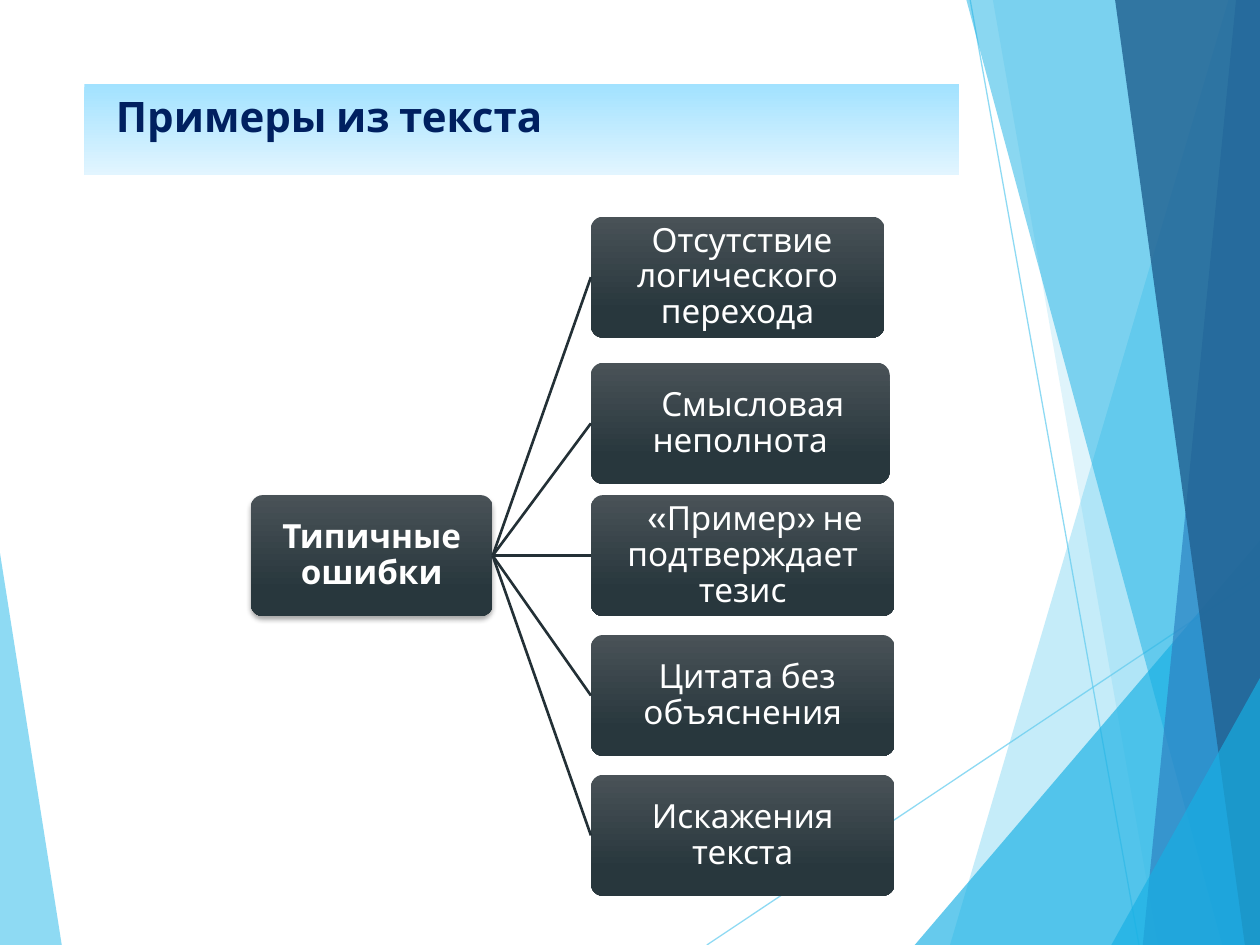
from dataclasses import dataclass

from lxml import etree
from pptx import Presentation
from pptx.dml.color import RGBColor
from pptx.enum.shapes import MSO_CONNECTOR, MSO_SHAPE
from pptx.enum.text import MSO_ANCHOR, MSO_AUTO_SIZE, PP_ALIGN
from pptx.oxml.ns import qn
from pptx.util import Inches, Pt

STRAIGHT = MSO_CONNECTOR.STRAIGHT
ROUND_RECT = MSO_SHAPE.ROUNDED_RECTANGLE
TOP, MIDDLE = MSO_ANCHOR.TOP, MSO_ANCHOR.MIDDLE
LEFT, CENTER = PP_ALIGN.LEFT, PP_ALIGN.CENTER
NO_AUTOFIT = MSO_AUTO_SIZE.NONE

SKY = RGBColor(0x5F, 0xCB, 0xEF)
CYAN = RGBColor(0x17, 0xB0, 0xE4)
BLUE = RGBColor(0x2E, 0x83, 0xC3)
DEEP_BLUE = RGBColor(0x22, 0x62, 0x92)
NAVY = RGBColor(0x00, 0x20, 0x60)
WHITE = RGBColor(0xFF, 0xFF, 0xFF)
LINK = RGBColor(0x23, 0x30, 0x36)
NODE_TOP = RGBColor(0x49, 0x52, 0x57)
NODE_BOTTOM = RGBColor(0x28, 0x37, 0x3D)
TITLE_TOP = RGBColor(0xA2, 0xE2, 0xFF)
TITLE_BOTTOM = RGBColor(0xE2, 0xF5, 0xFF)

FONT = "Cabin"
NODE_HEIGHT = 0.96
BRANCH_LEFT = 4.69


@dataclass
class Facet:
    points: list[tuple[float, float]]
    color: RGBColor
    opacity: int


@dataclass
class Ray:
    start: tuple[float, float]
    end: tuple[float, float]


@dataclass
class Node:
    text: str
    left: float
    top: float
    width: float
    indent: float = 0
    bold: bool = False


DECOR = [
    Facet([(0, 4.39), (0.49, 7.5), (0, 7.5)], SKY, 70),
    Ray((5.61, 7.5), (10, 4.57)),
    Ray((7.7, 0), (9.04, 7.5)),
    Facet([(9.75, 0), (7.54, 7.5), (10, 7.5), (10, 0)], SKY, 36),
    Facet([(7.88, 0), (9.19, 7.5), (10, 7.5), (10, 0)], SKY, 20),
    Facet([(7.26, 7.5), (10, 4.29), (10, 7.5)], CYAN, 66),
    Facet([(7.67, 0), (9.7, 7.5), (10, 7.5), (10, 0)], CYAN, 50),
    Facet([(9.81, 0), (9.07, 7.5), (10, 7.5), (10, 0)], BLUE, 70),
    Facet([(8.85, 0), (9.88, 7.5), (10, 7.5), (10, 0)], DEEP_BLUE, 82),
    Facet([(8.82, 7.5), (10, 5.38), (10, 7.5)], CYAN, 66),
]

ROOT = Node("Типичные ошибки", 1.99, 3.93, 1.92, bold=True)
BRANCHES = [
    Node("Отсутствие логического перехода", BRANCH_LEFT, 1.72, 2.33, 0.07),
    Node("Смысловая неполнота", BRANCH_LEFT, 2.88, 2.37, 0.2),
    Node("«Пример» не подтверждает тезис", BRANCH_LEFT, 3.93, 2.41, 0.2),
    Node("Цитата без объяснения", BRANCH_LEFT, 5.04, 2.41, 0.07),
    Node("Искажения текста", BRANCH_LEFT, 6.15, 2.41),
]


def set_opacity(fill_parent, percent: int) -> None:
    color = fill_parent.find(".//" + qn("a:srgbClr"))
    etree.SubElement(color, qn("a:alpha"), val=str(percent * 1000))


def fill_gradient(sp, top: RGBColor, bottom: RGBColor, end: float) -> None:
    sp.fill.gradient()
    sp.fill.gradient_angle = 270
    for stop, color, position in zip(sp.fill.gradient_stops, (top, bottom), (0, end)):
        stop.color.rgb = color
        stop.position = position


def add_line(slide, start, end, color: RGBColor, width: float):
    line = slide.shapes.add_connector(STRAIGHT, *map(Inches, (*start, *end)))
    line.line.color.rgb = color
    line.line.width = Pt(width)
    etree.SubElement(line._element.spPr, qn("a:effectLst"))
    return line


def add_ray(slide, ray: Ray) -> None:
    line = add_line(slide, ray.start, ray.end, SKY, 0.75)
    set_opacity(line._element.spPr, 70)


def add_facet(slide, facet: Facet) -> None:
    points = [(Inches(x), Inches(y)) for x, y in facet.points]
    builder = slide.shapes.build_freeform(*points[0])
    builder.add_line_segments(points[1:], close=True)
    sp = builder.convert_to_shape()
    sp.shadow.inherit = False
    sp.line.fill.background()
    sp.fill.solid()
    sp.fill.fore_color.rgb = facet.color
    set_opacity(sp._element.spPr, facet.opacity)


def add_run(p, text: str, size: float, color: RGBColor, bold: bool) -> None:
    r = p.add_run()
    r.text = text
    r.font.name = FONT
    r.font.size = Pt(size)
    r.font.bold = bold
    r.font.color.rgb = color


def add_title(slide, text: str) -> None:
    sp = slide.shapes.title
    sp.left, sp.top, sp.width, sp.height = map(Inches, (0.67, 0.67, 6.94, 0.72))
    fill_gradient(sp, TITLE_TOP, TITLE_BOTTOM, 1)
    tf = sp.text_frame
    tf.auto_size = NO_AUTOFIT
    tf.vertical_anchor = TOP
    tf.margin_left = Inches(0.25)
    p = tf.paragraphs[0]
    p.alignment = LEFT
    add_run(p, text, 24, NAVY, True)


def add_node(slide, node: Node):
    sp = slide.shapes.add_shape(
        ROUND_RECT, *map(Inches, (node.left, node.top, node.width, NODE_HEIGHT)))
    sp.adjustments[0] = 0.1
    sp.shadow.inherit = False
    sp.line.fill.background()
    fill_gradient(sp, NODE_TOP, NODE_BOTTOM, 0.78)
    tf = sp.text_frame
    tf.word_wrap = True
    tf.vertical_anchor = MIDDLE
    tf.margin_left = tf.margin_right = Inches(0.03)
    tf.margin_top = tf.margin_bottom = Inches(0.03)
    p = tf.paragraphs[0]
    p.alignment = CENTER
    p.line_spacing = 0.9
    if node.indent:
        p._p.get_or_add_pPr().set("indent", str(Inches(node.indent)))
    add_run(p, node.text, 19, WHITE, node.bold)
    return sp


def add_drop_shadow(sp) -> None:
    effects = sp._element.spPr.find(qn("a:effectLst"))
    shadow = etree.SubElement(effects, qn("a:outerShdw"), blurRad=str(Pt(3)),
                              dist=str(Pt(2)), dir="5400000", rotWithShape="0")
    etree.SubElement(shadow, qn("a:srgbClr"), val="000000")
    set_opacity(shadow, 35)


def main() -> None:
    prs = Presentation()
    prs.slide_width, prs.slide_height = Inches(10), Inches(7.5)
    slide = prs.slides.add_slide(prs.slide_layouts[5])
    for item in DECOR:
        if isinstance(item, Facet):
            add_facet(slide, item)
        else:
            add_ray(slide, item)
    add_title(slide, "Примеры из текста")
    root = add_node(slide, ROOT)
    add_drop_shadow(root)
    for node in BRANCHES:
        branch = add_node(slide, node)
        link = add_line(slide, (0, 0), (1, 1), LINK, 1.5)
        link.begin_connect(root, 3)
        link.end_connect(branch, 1)
    prs.save("out.pptx")


if __name__ == "__main__":
    main()
